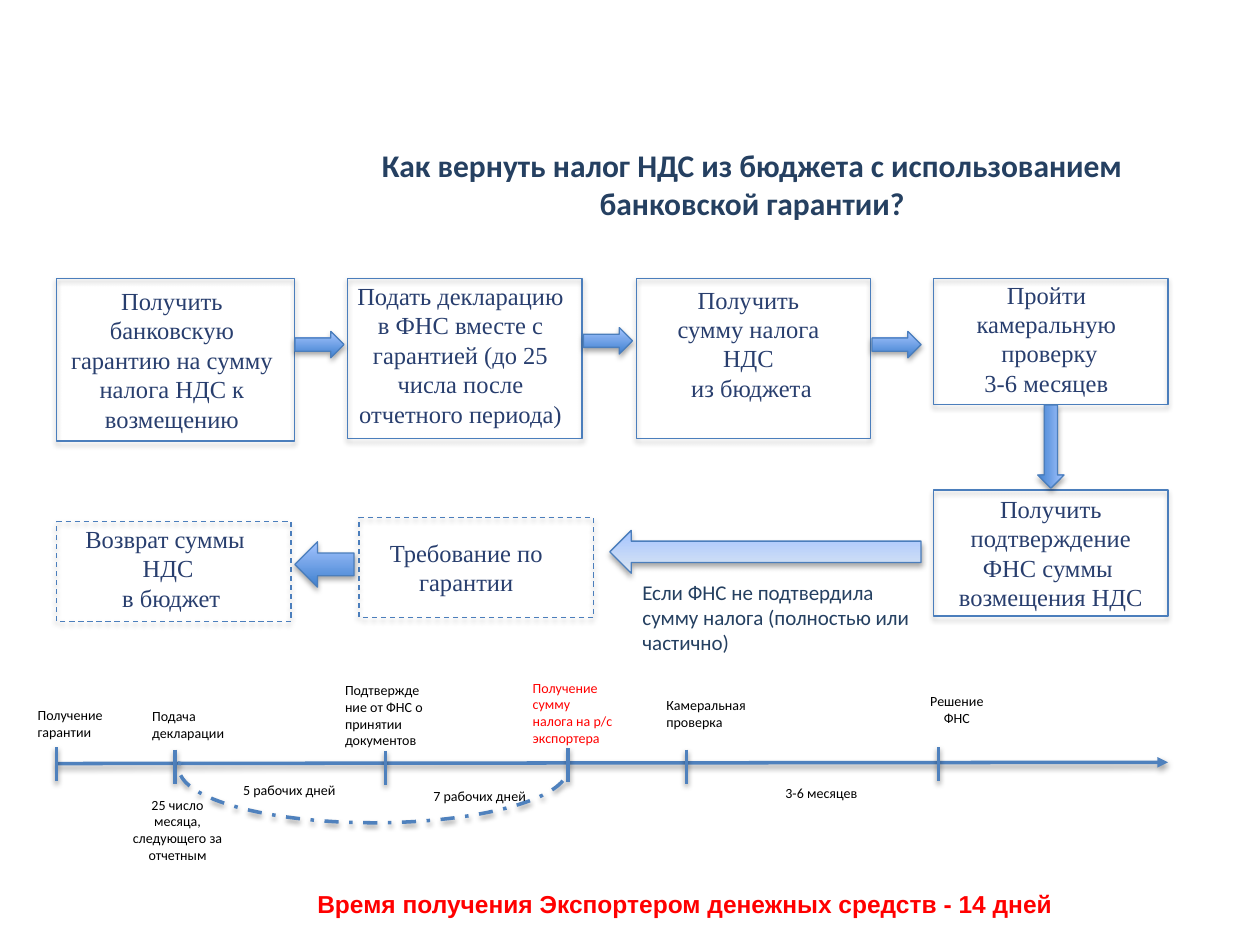
"""Build the slide on refunding VAT with a bank guarantee."""
import pptx
import pptx.dml.color
import pptx.enum.dml
import pptx.enum.shapes
import pptx.enum.text
import pptx.oxml
import pptx.oxml.ns
import pptx.util

Inches = pptx.util.Inches
FORM = pptx.enum.shapes.MSO_SHAPE
DASH = pptx.enum.dml.MSO_LINE
ALIGN = pptx.enum.text.PP_ALIGN

THEME = {
    "edge": "4B7EBC", "axis": "4F81BD",
    "deep": ("3F80CE", "A4C4FF"), "pale": ("DCE6F2", "A4C4FF"),
    "title": ("Calibri", 18, "254061", True),
    "step": ("Times New Roman", 14, "283E6E", False),
    "note": ("Calibri", 12, "254061", False),
    "mark": ("Calibri", 8, "000000", False),
    "alert": ("Calibri", 8, "FF0000", False),
    "total": ("Arial", 14, "FF0000", True),
}

TITLE = "Как вернуть налог НДС из бюджета с использованием банковской гарантии?"
TOTAL = "Время получения Экспортером денежных средств - 14 дней"

BOXES = [
    (0.45, 2.21, 1.89, 1.29, None),
    (2.76, 2.21, 1.86, 1.27, None),
    (5.05, 2.21, 1.86, 1.27, None),
    (7.41, 2.21, 1.86, 1, None),
    (7.41, 3.89, 1.86, 1, None),
    (2.85, 4.11, 1.86, 0.79, DASH.DASH),
    (0.45, 4.14, 1.86, 0.79, DASH.DASH),
]

ARROWS = [
    (FORM.RIGHT_ARROW, 2.34, 2.63, 0.39, 0.21, 0, "deep"),
    (FORM.RIGHT_ARROW, 4.63, 2.6, 0.39, 0.21, 0, "deep"),
    (FORM.RIGHT_ARROW, 6.92, 2.63, 0.39, 0.21, 0, "deep"),
    (FORM.RIGHT_ARROW, 8.01, 3.44, 0.66, 0.21, 90, "deep"),
    (FORM.LEFT_ARROW, 4.84, 4.21, 2.47, 0.34, 0, "pale"),
    (FORM.LEFT_ARROW, 2.34, 4.3, 0.47, 0.36, 0, "deep"),
]

TEXTS = [
    ("Получить банковскую гарантию на сумму налога НДС к возмещению",
     0.43, 2.22, 1.87, 1.28, "step", ALIGN.CENTER),
    ("Подать декларацию в ФНС вместе с гарантией (до 25 числа после отчетного периода)",
     2.72, 2.18, 1.87, 1.28, "step", ALIGN.CENTER),
    ("Получить\vсумму налога НДС\n из бюджета",
     5.13, 2.21, 1.62, 1.04, "step", ALIGN.CENTER),
    ("Пройти камеральную\n проверку\n 3-6 месяцев ",
     7.57, 2.17, 1.47, 1.04, "step", ALIGN.CENTER),
    ("Получить подтверждение ФНС суммы \nвозмещения НДС",
     7.45, 3.87, 1.78, 1.04, "step", ALIGN.CENTER),
    ("Требование по гарантии", 2.89, 4.22, 1.62, 0.57, "step", ALIGN.CENTER),
    ("Возврат суммы \nНДС\n в бюджет", 0.45, 4.11, 1.77, 0.8, "step", ALIGN.CENTER),
    ("Если ФНС не подтвердила сумму налога (полностью или частично)",
     5, 4.55, 2.32, 0.71, "note", ALIGN.LEFT),
    ("Получение гарантии", 0.2, 5.56, 0.72, 0.37, "mark", ALIGN.LEFT),
    ("Подача декларации", 1.11, 5.57, 0.83, 0.37, "mark", ALIGN.LEFT),
    ("Подтверждение от ФНС о принятии документов",
     2.64, 5.36, 0.83, 0.64, "mark", ALIGN.LEFT),
    ("Получение сумму\vналога на р/с экспортера",
     4.13, 5.34, 0.87, 0.64, "alert", ALIGN.LEFT),
    ("Камеральная проверка", 5.19, 5.48, 0.83, 0.37, "mark", ALIGN.LEFT),
    ("Решение ФНС", 7.18, 5.45, 0.83, 0.37, "mark", ALIGN.CENTER),
    ("25 число месяца, следующего за отчетным",
     0.91, 6.27, 1, 0.64, "mark", ALIGN.CENTER),
    ("5 рабочих дней ", 1.81, 6.15, 1, 0.24, "mark", ALIGN.CENTER),
    ("7 рабочих дней ", 3.32, 6.2, 1, 0.24, "mark", ALIGN.CENTER),
    ("3-6 месяцев", 6.02, 6.18, 1, 0.24, "mark", ALIGN.CENTER),
]

AXIS = (0.45, 6.06, 9.27, 6.05)
TICKS = [(0.45, 5.93), (1.39, 5.95), (3.06, 5.96),
         (4.51, 5.94), (5.45, 5.95), (7.45, 5.93)]
TICK_SIZE = 0.27


def tint(code):
    return pptx.dml.color.RGBColor.from_string(code)


def extend(node, xml):
    space = pptx.oxml.ns.nsdecls("a")
    node.append(pptx.oxml.parse_xml(xml.replace(" ", f" {space} ", 1)))


def finish(shape, color, width, alpha, gap, dash=None):
    shape.line.color.rgb = tint(color)
    shape.line.width = pptx.util.Pt(width)
    if dash:
        shape.line.dash_style = dash
    blur, dist = int(pptx.util.Pt(3.1)), int(pptx.util.Pt(gap))
    extend(shape._element.spPr,
           f'<a:effectLst ><a:outerShdw blurRad="{blur}" dist="{dist}" dir="5400000" '
           f'rotWithShape="0"><a:srgbClr val="000000"><a:alpha val="{alpha * 1000}"/>'
           '</a:srgbClr></a:outerShdw></a:effectLst>')


def add_form(slide, kind, place):
    return slide.shapes.add_shape(kind, *map(Inches, place))


def add_line(slide, ends):
    line = slide.shapes.add_connector(
        pptx.enum.shapes.MSO_CONNECTOR.STRAIGHT, *map(Inches, ends))
    finish(line, THEME["axis"], 2, 38, 1.6)
    return line


def write(shape, text, style, align, wrap=True):
    frame = shape.text_frame
    frame.text = text
    frame.word_wrap = wrap
    frame.auto_size = pptx.enum.text.MSO_AUTO_SIZE.SHAPE_TO_FIT_TEXT
    frame.vertical_anchor = pptx.enum.text.MSO_ANCHOR.TOP
    face, size, color, bold = THEME[style]
    for para in frame.paragraphs:
        para.alignment = align
        for run in para.runs:
            run.font.name = face
            run.font.size = pptx.util.Pt(size)
            run.font.color.rgb = tint(color)
            run.font.bold = bold


def add_text(slide, text, place, style, align, wrap=True):
    box = slide.shapes.add_textbox(*map(Inches, place))
    write(box, text, style, align, wrap)


def main():
    deck = pptx.Presentation()
    deck.slide_width, deck.slide_height = Inches(10), Inches(7.5)
    slide = deck.slides.add_slide(deck.slide_layouts[5])

    title = slide.shapes.title
    title.left, title.top, title.width, title.height = map(
        Inches, (2.64, 1.11, 6.66, 0.71))
    write(title, TITLE, "title", ALIGN.CENTER)

    for *place, dash in BOXES:
        box = add_form(slide, FORM.RECTANGLE, place)
        box.fill.background()
        finish(box, THEME["edge"], 0.75, 35, 1.8, dash)

    for kind, *place, turn, shade in ARROWS:
        arrow = add_form(slide, kind, place)
        arrow.rotation = turn
        arrow.fill.gradient()
        arrow.fill.gradient_angle = 90
        for stop, color, spot in zip(arrow.fill.gradient_stops, THEME[shade], (0, 1)):
            stop.color.rgb = tint(color)
            stop.position = spot
        finish(arrow, THEME["edge"], 0.75, 35, 1.8)

    axis = add_line(slide, AXIS)
    extend(axis.line._get_or_add_ln(), '<a:tailEnd type="triangle"/>')
    for left, top in TICKS:
        add_line(slide, (left, top, left, top + TICK_SIZE))

    arc = add_form(slide, FORM.ARC, (1.42, 5.66, 3.09, 0.87))
    arc.rotation = 180
    arc.adjustments[0], arc.adjustments[1] = 110.33, 1.11
    arc.fill.background()
    finish(arc, THEME["axis"], 2, 38, 1.6, DASH.DASH_DOT)

    for text, *place, style, align in TEXTS:
        add_text(slide, text, place, style, align)
    add_text(slide, TOTAL, (2.42, 7.01, 6.07, 0.34), "total", ALIGN.LEFT, False)

    deck.save("out.pptx")


if __name__ == "__main__":
    main()
